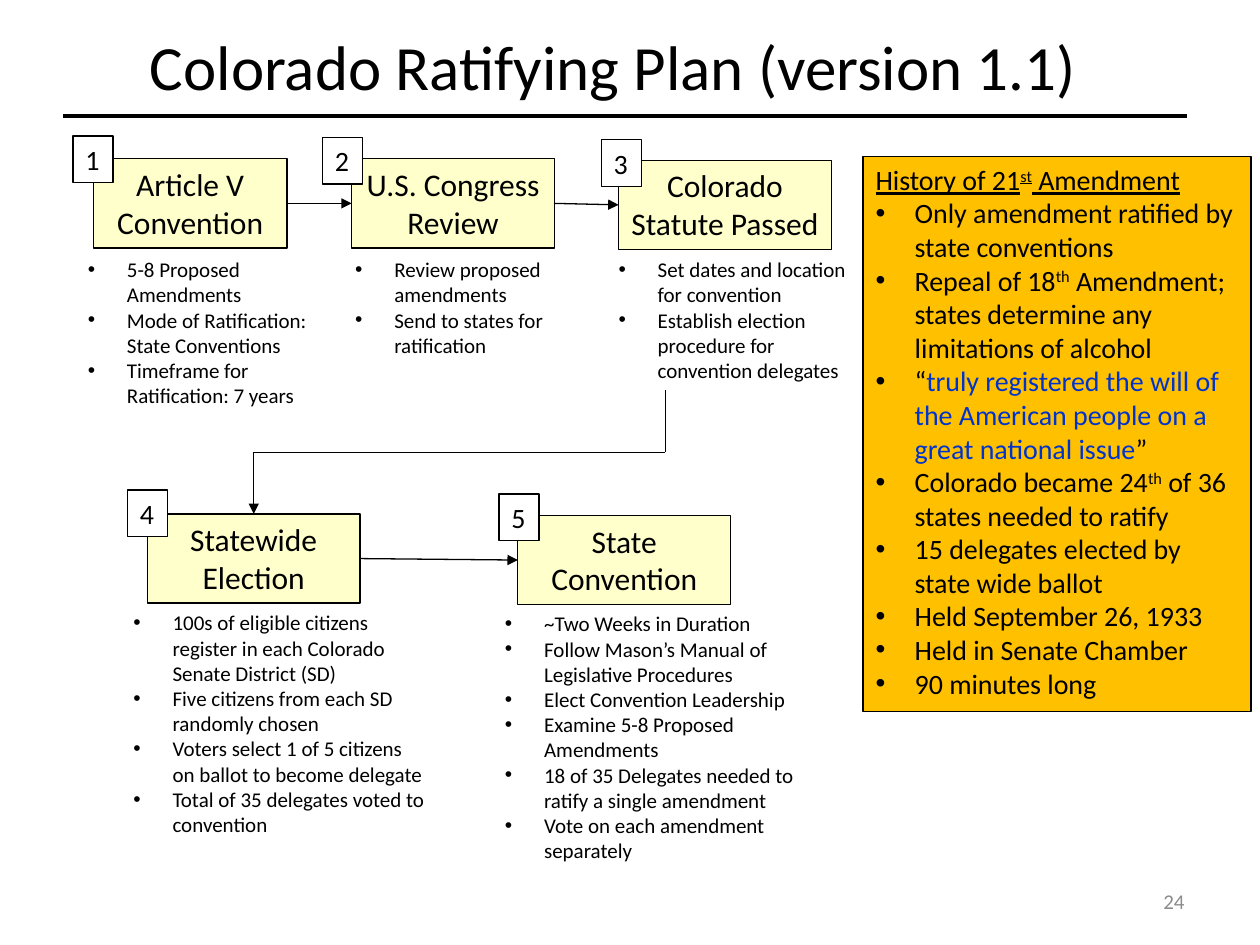
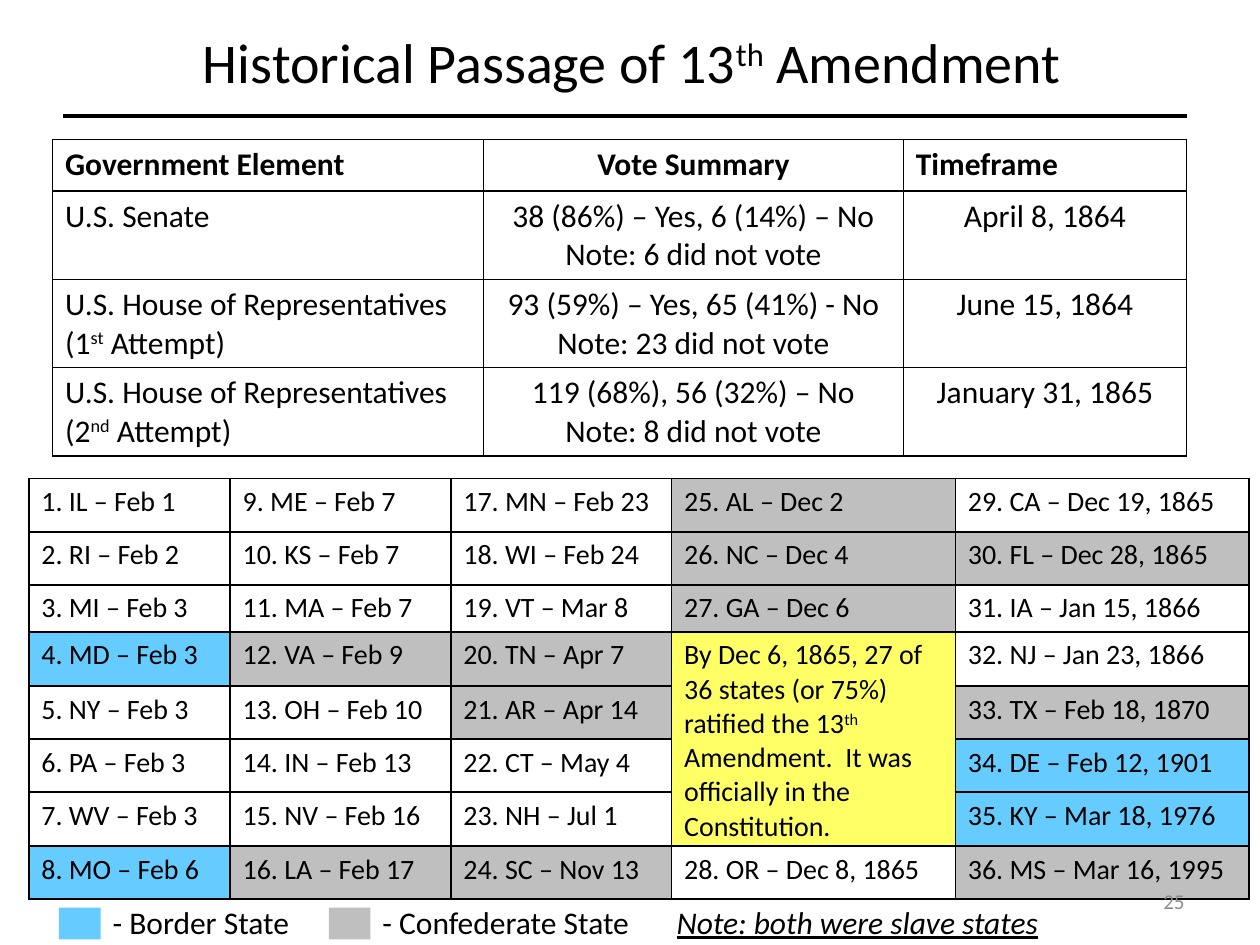
from itertools import count
from lxml import etree
from pptx import Presentation
from pptx.dml.color import RGBColor
from pptx.enum.shapes import MSO_CONNECTOR, MSO_SHAPE
from pptx.enum.text import MSO_ANCHOR, MSO_AUTO_SIZE, PP_ALIGN
from pptx.oxml.ns import qn
from pptx.util import Cm, Pt

LEFT, MID, RIGHT = PP_ALIGN.LEFT, PP_ALIGN.CENTER, PP_ALIGN.RIGHT
TOP, CENTER = MSO_ANCHOR.TOP, MSO_ANCHOR.MIDDLE
GROW = MSO_AUTO_SIZE.SHAPE_TO_FIT_TEXT
RECT, STRAIGHT = MSO_SHAPE.RECTANGLE, MSO_CONNECTOR.STRAIGHT

FONT = "Calibri"
HUE = {
    "ink": "000000", "paper": "FFFFFF", "step": "FFFFCC", "gold": "FFC000",
    "quote": "0033CC", "page": "8C8C8C", "border": "66CCFF",
    "south": "BFBFBF", "note": "FFFF66",
}

# ^x^ raises x, |x| sets x in the quote colour
STEPS = [
    {"name": "Article V Convention", "box": (1.88, 3.2, 3.91, 1.8),
     "tag": (1.47, 2.74), "list": (1.52, 5.05, 5.05, 3.33),
     "notes": ["5-8 Proposed Amendments",
               "Mode of Ratification: State Conventions",
               "Timeframe for Ratification: 7 years"]},
    {"name": "U.S. Congress Review", "box": (7.09, 3.2, 4.09, 1.8),
     "tag": (6.5, 2.77), "list": (6.91, 5.05, 4.6, 2.31),
     "notes": ["Review proposed amendments",
               "Send to states for ratification"]},
    {"name": "Colorado Statute Passed", "box": (12.47, 3.23, 4.29, 1.8),
     "tag": (12.12, 2.82), "list": (12.22, 5.05, 5.28, 2.82),
     "notes": ["Set dates and location for convention",
               "Establish election procedure for convention delegates"]},
    {"name": "Statewide Election", "box": (2.97, 10.36, 4.29, 1.8),
     "tag": (2.57, 9.88), "list": (2.44, 12.17, 6.4, 4.88),
     "notes": ["100s of eligible citizens register in each Colorado "
               "Senate District (SD)",
               "Five citizens from each SD randomly chosen",
               "Voters select 1 of 5 citizens on ballot to become delegate",
               "Total of 35 delegates voted to convention"]},
    {"name": "State Convention", "box": (10.44, 10.39, 4.29, 1.8),
     "tag": (10.06, 9.96), "list": (9.93, 12.19, 6.4, 5.38),
     "notes": ["~Two Weeks in Duration",
               "Follow Mason’s Manual of Legislative Procedures",
               "Elect Convention Leadership",
               "Examine 5-8 Proposed Amendments",
               "18 of 35 Delegates needed to ratify a single amendment",
               "Vote on each amendment separately"]},
]
LINKS = [(0, 1), (1, 2), (3, 4)]
BEND = {"x": 13.41, "top": 7.87, "low": 9.12}

PAST = [
    "History of 21^st^ Amendment",
    "Only amendment ratified by state conventions",
    "Repeal of 18^th^ Amendment; states determine any limitations of alcohol",
    "“|truly registered the will of the American people on a great "
    "national issue|”",
    "Colorado became 24^th^ of 36 states needed to ratify",
    "15 delegates elected by state wide ballot",
    "Held September 26, 1933",
    "Held in Senate Chamber",
    "90 minutes long",
]

VOTES = [
    (["Government Element"], ["Vote Summary"], ["Timeframe"]),
    (["U.S. Senate"],
     ["38 (86%) – Yes, 6 (14%) – No", "Note: 6 did not vote"],
     ["April 8, 1864"]),
    (["U.S. House of Representatives", "(1^st^ Attempt)"],
     ["93 (59%) – Yes, 65 (41%) - No Note: 23 did not vote"],
     ["June 15, 1864"]),
    (["U.S. House of Representatives", "(2^nd^ Attempt)"],
     ["119 (68%), 56 (32%) – No", "Note: 8 did not vote"],
     ["January 31, 1865"]),
]

PASSED = ("By Dec 6, 1865, 27 of 36 states (or 75%) ratified the 13^th^ "
          "Amendment.  It was officially in the Constitution.")
STATES = [
    ["IL – Feb 1", "RI – Feb 2", "MI – Feb 3", "MD – Feb 3",
     "NY – Feb 3", "PA – Feb 3", "WV – Feb 3", "MO – Feb 6"],
    ["ME – Feb 7", "KS – Feb 7", "MA – Feb 7", "VA – Feb 9",
     "OH – Feb 10", "IN – Feb 13", "NV – Feb 16", "LA – Feb 17"],
    ["MN – Feb 23", "WI – Feb 24", "VT – Mar 8", "TN – Apr 7",
     "AR – Apr 14", "CT – May 4", "NH – Jul 1", "SC – Nov 13"],
    ["AL – Dec 2", "NC – Dec 4", "GA – Dec 6", PASSED,
     None, None, None, "OR – Dec 8, 1865"],
    ["CA – Dec 19, 1865", "FL – Dec 28, 1865", "IA – Jan 15, 1866",
     "NJ – Jan 23, 1866", "TX – Feb 18, 1870", "DE – Feb 12, 1901",
     "KY – Mar 18, 1976", "MS – Mar 16, 1995"],
]
BORDER = {4, 8, 34, 35}
SOUTH = {12, 16, 20, 21, 24, 25, 26, 27, 30, 33, 36}

KEYS = [
    ("border", 1.19, "- Border State", 4.11),
    ("south", 6.63, "- Confederate State", 5.54),
]


def rgb(key):
    return RGBColor.from_string(HUE[key])


def write(frame, paras, size=18, hue="ink", align=LEFT, bold=False,
          ital=False, under=False, bullet=False, head=False):
    for i, para in enumerate(paras):
        line = frame.paragraphs[0] if i == 0 else frame.add_paragraph()
        line.alignment = align
        top = head and i == 0
        if bullet and not top:
            props = line._p.get_or_add_pPr()
            props.set("marL", str(Cm(0.79)))
            props.set("indent", str(-Cm(0.79)))
            etree.SubElement(props, qn("a:buFont")).set("typeface", "Arial")
            etree.SubElement(props, qn("a:buChar")).set("char", "•")
        for j, part in enumerate(para.split("^")):
            for k, bit in enumerate(part.split("|")):
                if not bit:
                    continue
                run = line.add_run()
                run.text = bit
                font = run.font
                font.name, font.size = FONT, Pt(size)
                font.bold, font.italic = bold, ital
                font.underline = under or top
                font.color.rgb = rgb("quote" if k % 2 else hue)
                if j % 2:
                    run._r.get_or_add_rPr().set("baseline", "30000")


def label(slide, at, paras, fill=None, wrap=True, anchor=TOP, **form):
    place = [Cm(v) for v in at]
    if fill:
        shape = box(slide, at, fill, 0.75)
    else:
        shape = slide.shapes.add_textbox(*place)
    frame = shape.text_frame
    frame.word_wrap, frame.vertical_anchor = wrap, anchor
    frame.auto_size = GROW
    write(frame, paras, **form)
    return shape


def box(slide, at, fill, edge=0):
    shape = slide.shapes.add_shape(RECT, *[Cm(v) for v in at])
    shape.shadow.inherit = False
    shape.fill.solid()
    shape.fill.fore_color.rgb = rgb(fill)
    if edge:
        shape.line.color.rgb = rgb("ink")
        shape.line.width = Pt(edge)
    else:
        shape.line.fill.background()
    return shape


def rule(slide, start, end, width=0.75, arrow=False):
    line = slide.shapes.add_connector(
        STRAIGHT, *[Cm(v) for v in (*start, *end)])
    line.line.color.rgb = rgb("ink")
    line.line.width = Pt(width)
    if arrow:
        tail = etree.SubElement(line.line._get_or_add_ln(), qn("a:tailEnd"))
        tail.set("type", "triangle")
    etree.SubElement(line._element.spPr, qn("a:effectLst"))
    return line


def grid(slide, x, y, cols, rows):
    table = slide.shapes.add_table(
        len(rows), len(cols), Cm(x), Cm(y),
        Cm(sum(cols)), Cm(sum(rows))).table
    table.first_row = table.horz_banding = False
    for col, size in zip(table.columns, cols):
        col.width = Cm(size)
    for row, size in zip(table.rows, rows):
        row.height = Cm(size)
    for cell in table.iter_cells():
        props = cell._tc.get_or_add_tcPr()
        for side in ("a:lnL", "a:lnR", "a:lnT", "a:lnB"):
            edge = etree.SubElement(props, qn(side), w=str(Pt(1)))
            fill = etree.SubElement(edge, qn("a:solidFill"))
            etree.SubElement(fill, qn("a:srgbClr"), val=HUE["ink"])
        paint(cell, "paper")
    return table


def paint(cell, hue):
    cell.fill.solid()
    cell.fill.fore_color.rgb = rgb(hue)


def page(deck, title, at, size):
    slide = deck.slides.add_slide(deck.slide_layouts[6])
    rule(slide, (1.27, 2.33), (23.93, 2.33), width=2.25)
    label(slide, at, [title], wrap=False, size=size, align=MID)
    return slide


def folio(slide, num):
    label(slide, (18.21, 17.65, 5.92, 1.02), [str(num)], anchor=CENTER,
          size=12, hue="page", align=RIGHT)


def plan(deck):
    slide = page(deck, "Colorado Ratifying Plan (version 1.1)",
                 (2.67, 0.43, 19.38, 1.8), 36)
    boxes = []
    for num, step in enumerate(STEPS, 1):
        boxes.append(label(slide, step["box"], [step["name"]],
                           fill="step", align=MID))
        label(slide, step["list"], step["notes"], size=12, bullet=True)
        label(slide, (*step["tag"], 0.81, 0.94), [str(num)],
              fill="paper", wrap=False, size=16)
    for a, b in LINKS:
        link = rule(slide, (0, 0), (1, 1), arrow=True)
        link.begin_connect(boxes[a], 3)
        link.end_connect(boxes[b], 1)
    x, y, wide, _ = STEPS[3]["box"]
    mid, low = x + wide / 2, BEND["low"]
    rule(slide, (BEND["x"], BEND["top"]), (BEND["x"], low))
    rule(slide, (mid, low), (BEND["x"], low))
    rule(slide, (mid, low), (mid, y), arrow=True).end_connect(boxes[3], 0)
    label(slide, (17.4, 3.15, 7.82, 11.2), PAST, fill="gold", size=16,
          bullet=True, head=True)
    folio(slide, 24)


def passage(deck):
    slide = page(deck, "Historical Passage of 13^th^ Amendment",
                 (3.71, 0.43, 18.06, 1.63), 32)
    votes = grid(slide, 1.06, 2.81, [8.69, 8.46, 5.71], [1.04] + [1.78] * 3)
    for r, row in enumerate(VOTES):
        for c, paras in enumerate(row):
            align = MID if c == 1 or (c == 2 and r) else LEFT
            write(votes.cell(r, c).text_frame, paras,
                  align=align, bold=r == 0)

    states = grid(slide, 0.58, 9.65, [4.06, 4.45, 4.45, 5.72, 5.92],
                  [1.07, 1.07, 0.95, 1.09] + [1.07] * 4)
    states.cell(3, 3).merge(states.cell(6, 3))
    order = count(1)
    for c, col in enumerate(STATES):
        for r, item in enumerate(col):
            if item is None:
                continue
            cell = states.cell(r, c)
            if item == PASSED:
                paint(cell, "note")
            else:
                num = next(order)
                item = f"{num}. {item}"
                if num in BORDER:
                    paint(cell, "border")
                elif num in SOUTH:
                    paint(cell, "south")
            write(cell.text_frame, [item], size=16)

    for hue, x, name, wide in KEYS:
        box(slide, (x, 18.3, 0.84, 0.64), hue)
        label(slide, (x + 0.83, 18.08, wide, 1.02), [name], wrap=False)
    label(slide, (13.39, 18.08, 7.92, 1.02), ["Note: both were slave states"],
          wrap=False, ital=True, under=True)
    folio(slide, 25)


def main():
    deck = Presentation()
    deck.slide_width, deck.slide_height = Cm(25.4), Cm(19.05)
    plan(deck)
    passage(deck)
    deck.save("out.pptx")


if __name__ == "__main__":
    main()
